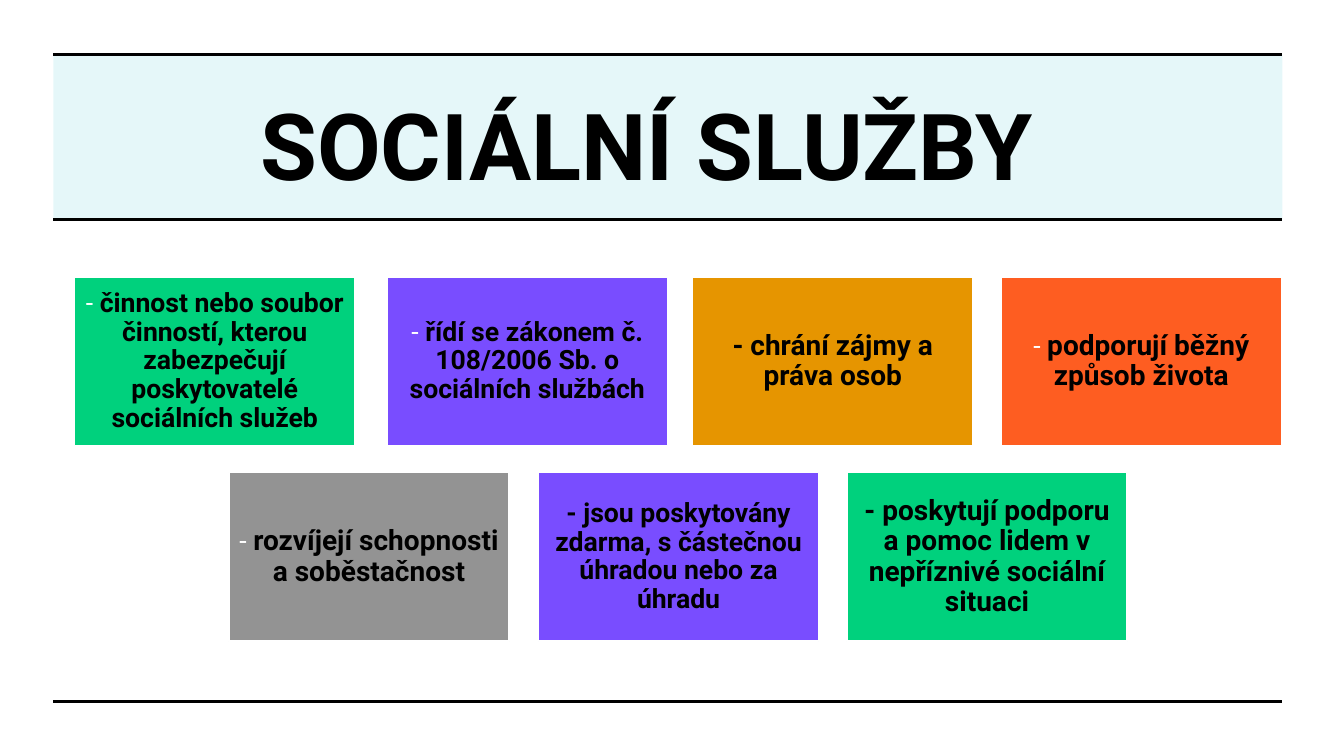
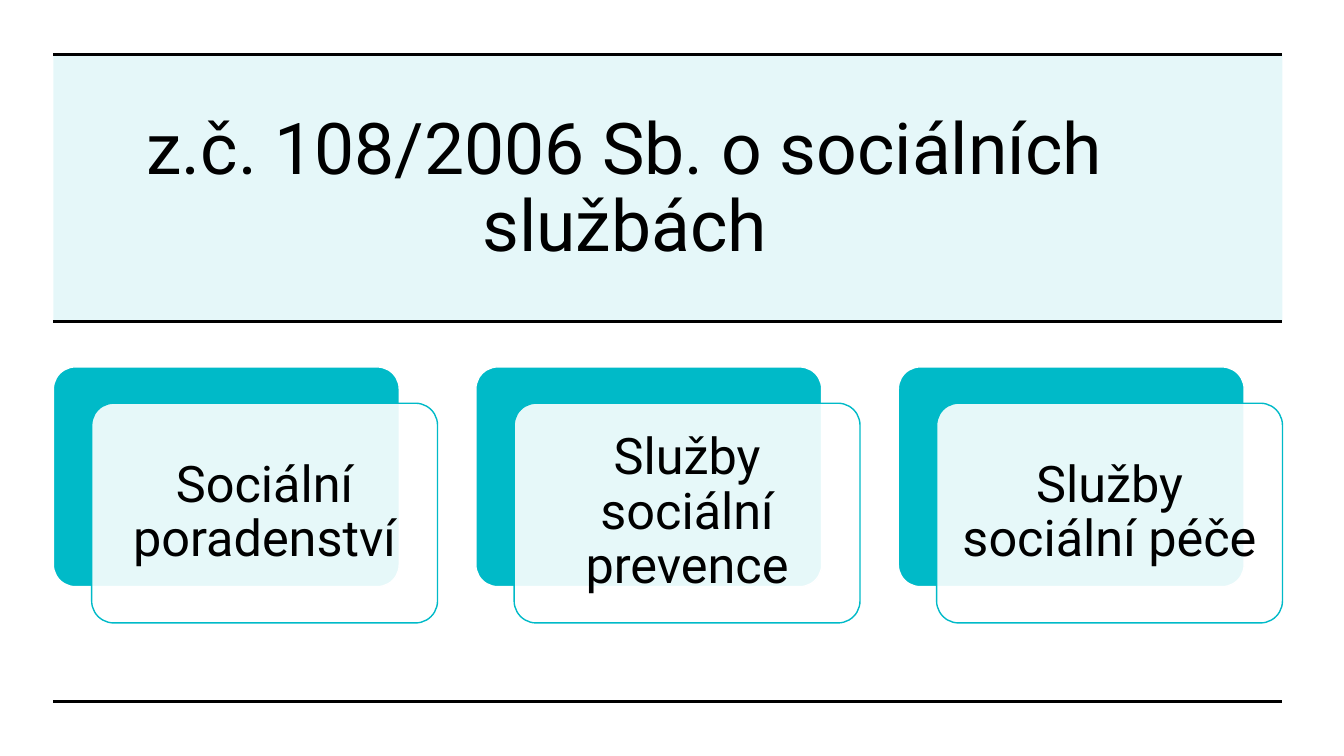
from lxml.etree import SubElement
from pptx import Presentation
from pptx.dml.color import RGBColor
from pptx.enum.shapes import MSO_CONNECTOR as Connector, MSO_SHAPE as Shape
from pptx.enum.text import MSO_ANCHOR as Anchor, MSO_AUTO_SIZE as AutoSize, PP_ALIGN as Align
from pptx.oxml.ns import qn
from pptx.util import Emu, Pt

BLACK, WHITE, TEAL = "000000", "FFFFFF", "00BAC8"
GREEN, VIOLET, AMBER = "00D17D", "794DFF", "E69500"
ORANGE, GREY = "FE5D21", "939393"
FONT = "Roboto"


def px(length):
    """100 px to the inch."""
    return Emu(length * 9144)


def rgb(code):
    return RGBColor.from_string(code)


def write(frame, text, size=20, color=BLACK, bold=False, spacing=None, margin=None):
    """Add a run of text to the centred paragraph of a frame."""
    frame.word_wrap = True
    frame.auto_size = AutoSize.NONE
    frame.vertical_anchor = Anchor.MIDDLE
    if margin is not None:
        frame.margin_left = frame.margin_right = px(margin)
        frame.margin_top = frame.margin_bottom = px(margin)
    paragraph = frame.paragraphs[0]
    paragraph.alignment = Align.CENTER
    if spacing:
        paragraph.line_spacing = spacing
    run = paragraph.add_run()
    run.text = text
    font = run.font
    font.name, font.size, font.bold = FONT, Pt(size), bold
    font.color.rgb = rgb(color)


class Deck:
    LEFT, RIGHT, TOP, BOTTOM = 53, 1272, 54, 696

    def __init__(self):
        self.file = Presentation()
        self.file.slide_width, self.file.slide_height = px(1333), px(750)
        self.slide = None

    def new_slide(self, title, title_box, band_bottom, **style):
        self.slide = self.file.slides.add_slide(self.file.slide_layouts[5])
        self.box((self.LEFT, self.TOP, self.RIGHT - self.LEFT, band_bottom - self.TOP),
                 TEAL, opacity=10)
        self.title(title, title_box, **style)
        for y in (self.TOP, band_bottom, self.BOTTOM):
            self.rule(y)

    def title(self, text, place, **style):
        heading = self.slide.shapes.title
        heading.left, heading.top, heading.width, heading.height = map(px, place)
        write(heading.text_frame, text, **style)
        # Bring the title in front of its band
        self.slide.shapes.element.append(heading.element)

    def rule(self, y):
        line = self.slide.shapes.add_connector(
            Connector.STRAIGHT, px(self.LEFT), px(y), px(self.RIGHT), px(y))
        line.line.color.rgb = rgb(BLACK)
        line.line.width = Pt(2.25)
        SubElement(line.element.spPr, qn("a:effectLst"))

    def box(self, place, fill, outline=None, opacity=100, rounded=False):
        kind = Shape.ROUNDED_RECTANGLE if rounded else Shape.RECTANGLE
        box = self.slide.shapes.add_shape(kind, *map(px, place))
        box.shadow.inherit = False
        if rounded:
            box.adjustments[0] = 0.1
        box.fill.solid()
        box.fill.fore_color.rgb = rgb(fill)
        if opacity < 100:
            color = box.element.spPr.find(qn("a:solidFill"))[0]
            SubElement(color, qn("a:alpha"), val=str(opacity * 1000))
        if outline:
            box.line.color.rgb = rgb(outline)
            box.line.width = Pt(1)
        else:
            box.line.fill.background()
        return box

    def fact(self, left, top, fill, text, size, dash):
        frame = self.box((left, top, 278, 167), fill, WHITE).text_frame
        if dash == WHITE:
            write(frame, "- ", size=19, color=WHITE)
        else:
            text = "- " + text
        write(frame, text, size=size, bold=True, spacing=0.9, margin=8)

    def service(self, left, top, text):
        self.box((left, top, 343, 218), TEAL, WHITE, rounded=True)
        front = self.box((left + 38, top + 36, 343, 218), WHITE, TEAL,
                         opacity=90, rounded=True)
        write(front.text_frame, text, size=36, spacing=0.9, margin=15)


# Facts by row: left, fill, text, size, colour of the dash
FACT_ROWS = {
    275: [
        (74, GREEN, "činnost nebo soubor činností, kterou zabezpečují "
                    "poskytovatelé sociálních služeb", 19, WHITE),
        (384, VIOLET, "řídí se zákonem č. 108/2006 Sb. o sociálních službách", 19, WHITE),
        (687, AMBER, "chrání zájmy a práva osob", 20, BLACK),
        (993, ORANGE, "podporují běžný způsob života", 20, WHITE),
    ],
    469: [
        (227, GREY, "rozvíjejí schopnosti a soběstačnost", 20, WHITE),
        (534, VIOLET, "jsou poskytovány zdarma, s částečnou úhradou nebo za úhradu", 19, BLACK),
        (840, GREEN, "poskytují podporu a pomoc lidem v nepříznivé sociální situaci", 20, BLACK),
    ],
}
SERVICES = ["Sociální poradenství", "Služby sociální prevence", "Služby sociální péče"]


def main():
    deck = Deck()

    # Social services: the main facts
    deck.new_slide("SOCIÁLNÍ SLUŽBY", (53, 81, 1177, 122), 218, size=66, bold=True)
    for top, facts in FACT_ROWS.items():
        for left, *fact in facts:
            deck.fact(left, top, *fact)

    # The act: three kinds of service
    deck.new_slide("z.č. 108/2006 Sb. o sociálních službách", (53, 107, 1133, 163), 319,
                   size=51, spacing=0.9)
    for column, service in enumerate(SERVICES):
        deck.service(deck.LEFT + 419 * column, 364, service)

    deck.file.save("out.pptx")


if __name__ == "__main__":
    main()
